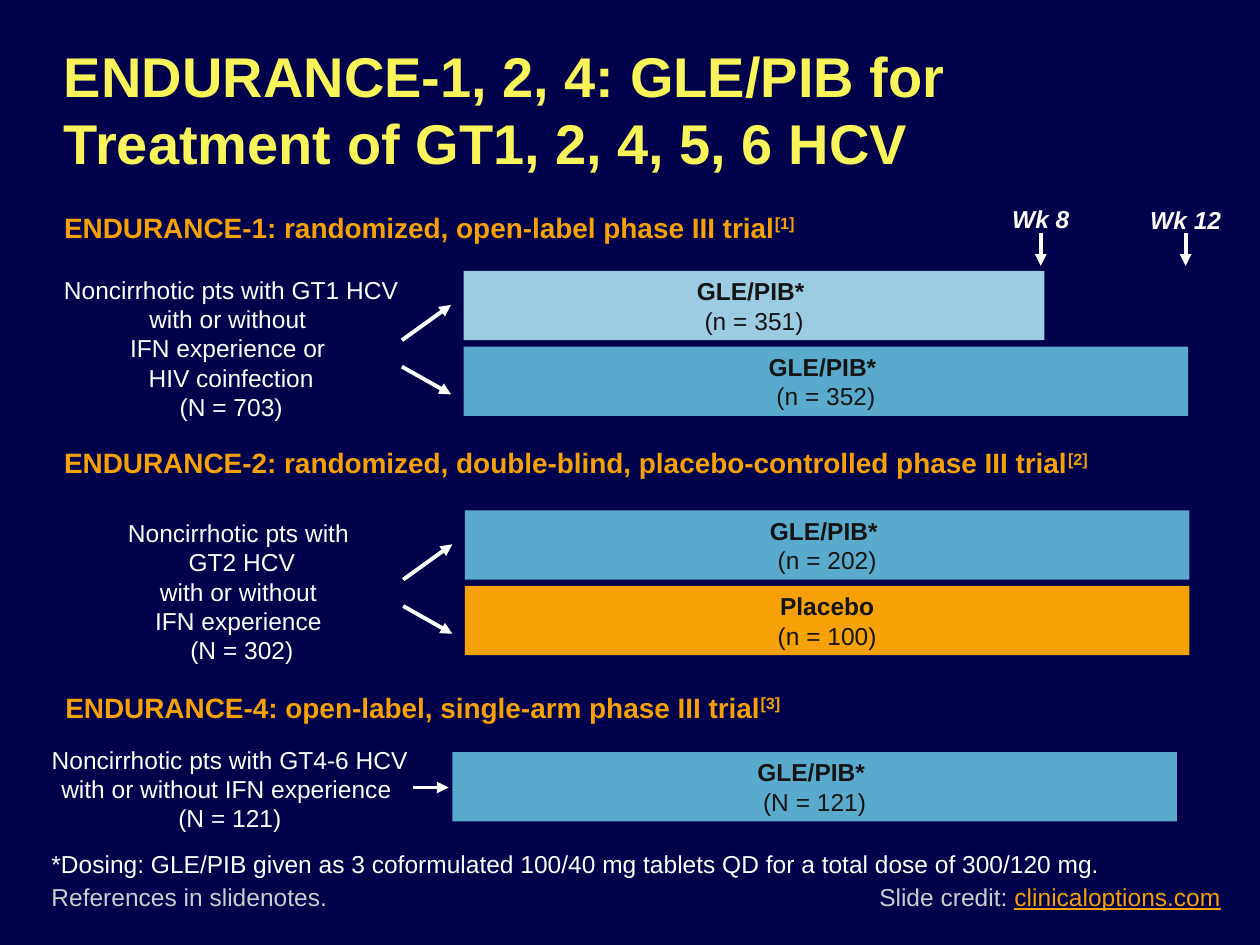
from dataclasses import dataclass
from typing import Any, NamedTuple

from lxml.etree import SubElement
from pptx import Presentation
from pptx.dml.color import RGBColor
from pptx.enum.shapes import MSO_CONNECTOR, MSO_SHAPE
from pptx.enum.text import MSO_ANCHOR, PP_ALIGN
from pptx.oxml.ns import qn
from pptx.util import Inches, Pt

NAVY = RGBColor(0x00, 0x00, 0x4B)
YELLOW = RGBColor(0xF8, 0xF4, 0x5A)
ORANGE = RGBColor(0xF6, 0xA1, 0x08)
LIGHT_BLUE = RGBColor(0x9C, 0xCC, 0xE2)
BLUE = RGBColor(0x5A, 0xAA, 0xCE)
WHITE = RGBColor(0xFF, 0xFF, 0xFF)
GRAY = RGBColor(0xCD, 0xCD, 0xCF)
BLACK = RGBColor(0x14, 0x14, 0x14)

BASE = {"name": "Arial", "size": Pt(14), "bold": False}
TITLE = BASE | {"size": Pt(32), "bold": True, "color": YELLOW}
HEADING = BASE | {"size": Pt(16), "bold": True, "color": ORANGE}
BODY = BASE | {"color": WHITE}
WEEK = BODY | {"bold": True, "italic": True}
FOOTER = BASE | {"color": GRAY}
LINK = BASE | {"color": ORANGE, "underline": True}
ARM_SIZE = BASE | {"color": BLACK}
ARM_NAME = ARM_SIZE | {"bold": True}

BAR_HEIGHT = 0.55
BAR_PITCH = 0.6
WEEK_8_WIDTH = 4.61
WEEK_12_WIDTH = 5.75


class Box(NamedTuple):
    left: float
    top: float
    width: float
    height: float


class Span(NamedTuple):
    text: str
    style: dict[str, Any]
    superscript: bool = False


class Arrow(NamedTuple):
    x1: float
    y1: float
    x2: float
    y2: float


class Arm(NamedTuple):
    name: str
    size: str
    color: RGBColor = BLUE
    width: float = WEEK_12_WIDTH


@dataclass(frozen=True)
class Trial:
    heading: str
    reference: str
    heading_left: float
    heading_top: float
    patients: list[str]
    patients_box: Box
    bar_left: float
    bar_top: float
    arms: list[Arm]


# Arrow ends relative to the top left corner of a trial's first bar
SPLIT_ARROWS = [Arrow(-0.49, 0.55, -0.1, 0.27), Arrow(-0.49, 0.76, -0.1, 0.98)]
SINGLE_ARROW = [Arrow(-0.31, 0.28, -0.03, 0.28)]

TRIALS = [
    Trial(
        "ENDURANCE-1: randomized, open-label phase III trial", "[1]", 0.41, 1.65,
        ["Noncirrhotic pts with GT1 HCV", "with or without ",
         "IFN experience or \nHIV coinfection", "(N = 703)"],
        Box(0.31, 2.13, 3.05, 1.28), 3.68, 2.15,
        [Arm("GLE/PIB* ", "(n = 351)", LIGHT_BLUE, WEEK_8_WIDTH),
         Arm("GLE/PIB* ", "(n = 352)")],
    ),
    Trial(
        "ENDURANCE-2: randomized, double-blind, placebo-controlled phase III trial",
        "[2]", 0.41, 3.52,
        ["Noncirrhotic pts with \nGT2 HCV", "with or without ",
         "IFN experience ", "(N = 302)"],
        Box(0.39, 4.06, 3.06, 1.28), 3.69, 4.05,
        [Arm("GLE/PIB* ", "(n = 202)"), Arm("Placebo", "(n = 100)", ORANGE)],
    ),
    Trial(
        "ENDURANCE-4: open-label, single-arm phase III trial", "[3]", 0.42, 5.46,
        ["Noncirrhotic pts with GT4-6 HCV", "with or without IFN experience ",
         "(N = 121)"],
        Box(0.16, 5.86, 3.33, 0.81), 3.59, 5.97,
        [Arm("GLE/PIB* ", "(N = 121)")],
    ),
]


def add_span(paragraph, span: Span) -> None:
    """Add styled text, turning newlines into line breaks."""
    for index, line in enumerate(span.text.split("\n")):
        if index:
            paragraph.add_line_break()
        if not line:
            continue
        run = paragraph.add_run()
        run.text = line
        for attribute, value in span.style.items():
            if attribute == "color":
                run.font.color.rgb = value
            else:
                setattr(run.font, attribute, value)
        if span.superscript:
            run._r.get_or_add_rPr().set("baseline", "30000")


def fill_frame(frame, paragraphs: list[list[Span]], layout: dict[str, Any]) -> None:
    for index, spans in enumerate(paragraphs):
        paragraph = frame.add_paragraph() if index else frame.paragraphs[0]
        for attribute, value in layout.items():
            setattr(paragraph, attribute, value)
        for span in spans:
            add_span(paragraph, span)


def add_text(slide, box: Box, paragraphs: list[list[Span]],
             align=PP_ALIGN.LEFT, anchor=MSO_ANCHOR.TOP, wrap: bool = True,
             line_spacing: float = 1.0) -> None:
    frame = slide.shapes.add_textbox(*map(Inches, box)).text_frame
    frame.word_wrap = wrap
    frame.vertical_anchor = anchor
    fill_frame(frame, paragraphs, {"alignment": align, "line_spacing": line_spacing})


def add_arrow(slide, arrow: Arrow) -> None:
    connector = slide.shapes.add_connector(MSO_CONNECTOR.STRAIGHT, *map(Inches, arrow))
    connector.line.color.rgb = WHITE
    connector.line.width = Pt(2.25)
    SubElement(connector.line._get_or_add_ln(), qn("a:tailEnd"), type="triangle")
    SubElement(connector._element.spPr, qn("a:effectLst"))


def add_bar(slide, arm: Arm, left: float, top: float) -> None:
    bar = slide.shapes.add_shape(
        MSO_SHAPE.RECTANGLE, *map(Inches, (left, top, arm.width, BAR_HEIGHT)))
    bar.shadow.inherit = False
    bar.fill.solid()
    bar.fill.fore_color.rgb = arm.color
    bar.line.fill.background()
    bar.text_frame.word_wrap = False
    bar.text_frame.vertical_anchor = MSO_ANCHOR.MIDDLE
    spans = [Span(arm.name + "\n", ARM_NAME), Span(arm.size, ARM_SIZE)]
    fill_frame(bar.text_frame, [spans], {"alignment": PP_ALIGN.CENTER})


def add_trial(slide, trial: Trial) -> None:
    add_text(slide, Box(trial.heading_left, trial.heading_top, 9.25, 0.44),
             [[Span(trial.heading, HEADING), Span(trial.reference, HEADING, True)]],
             line_spacing=0.9)
    add_text(slide, trial.patients_box,
             [[Span(line, BODY)] for line in trial.patients], PP_ALIGN.CENTER)
    for row, arm in enumerate(trial.arms):
        add_bar(slide, arm, trial.bar_left, trial.bar_top + row * BAR_PITCH)
    for x1, y1, x2, y2 in SPLIT_ARROWS if len(trial.arms) > 1 else SINGLE_ARROW:
        add_arrow(slide, Arrow(trial.bar_left + x1, trial.bar_top + y1,
                               trial.bar_left + x2, trial.bar_top + y2))


def add_week(slide, label: str, center: float, top: float) -> None:
    add_text(slide, Box(center - 0.44, top, 0.88, 0.34), [[Span(label, WEEK)]],
             PP_ALIGN.CENTER)
    add_arrow(slide, Arrow(center, 1.85, center, 2.11))


def main() -> None:
    presentation = Presentation()
    presentation.slide_width = Inches(10)
    presentation.slide_height = Inches(7.5)
    slide = presentation.slides.add_slide(presentation.slide_layouts[6])
    slide.background.fill.solid()
    slide.background.fill.fore_color.rgb = NAVY

    title = "ENDURANCE-1, 2, 4: GLE/PIB for Treatment of GT1, 2, 4, 5, 6 HCV"
    add_text(slide, Box(0.41, 0.26, 9.23, 1.21), [[Span(title, TITLE)]],
             anchor=MSO_ANCHOR.MIDDLE)
    for trial in TRIALS:
        add_trial(slide, trial)
    add_week(slide, "Wk 8", 8.26, 1.57)
    add_week(slide, "Wk 12", 9.41, 1.58)

    dosing = ("*Dosing: GLE/PIB given as 3 coformulated 100/40 mg tablets QD "
              "for a total dose of 300/120 mg.")
    add_text(slide, Box(0.31, 6.69, 9.22, 0.34), [[Span(dosing, BODY)]])
    add_text(slide, Box(0.31, 6.94, 6.57, 0.34),
             [[Span("References in slidenotes.", FOOTER)]], anchor=MSO_ANCHOR.BOTTOM)
    add_text(slide, Box(6.88, 6.95, 2.92, 0.34),
             [[Span("Slide credit: ", FOOTER), Span("clinicaloptions.com", LINK)]],
             wrap=False)
    presentation.save("out.pptx")


if __name__ == "__main__":
    main()
